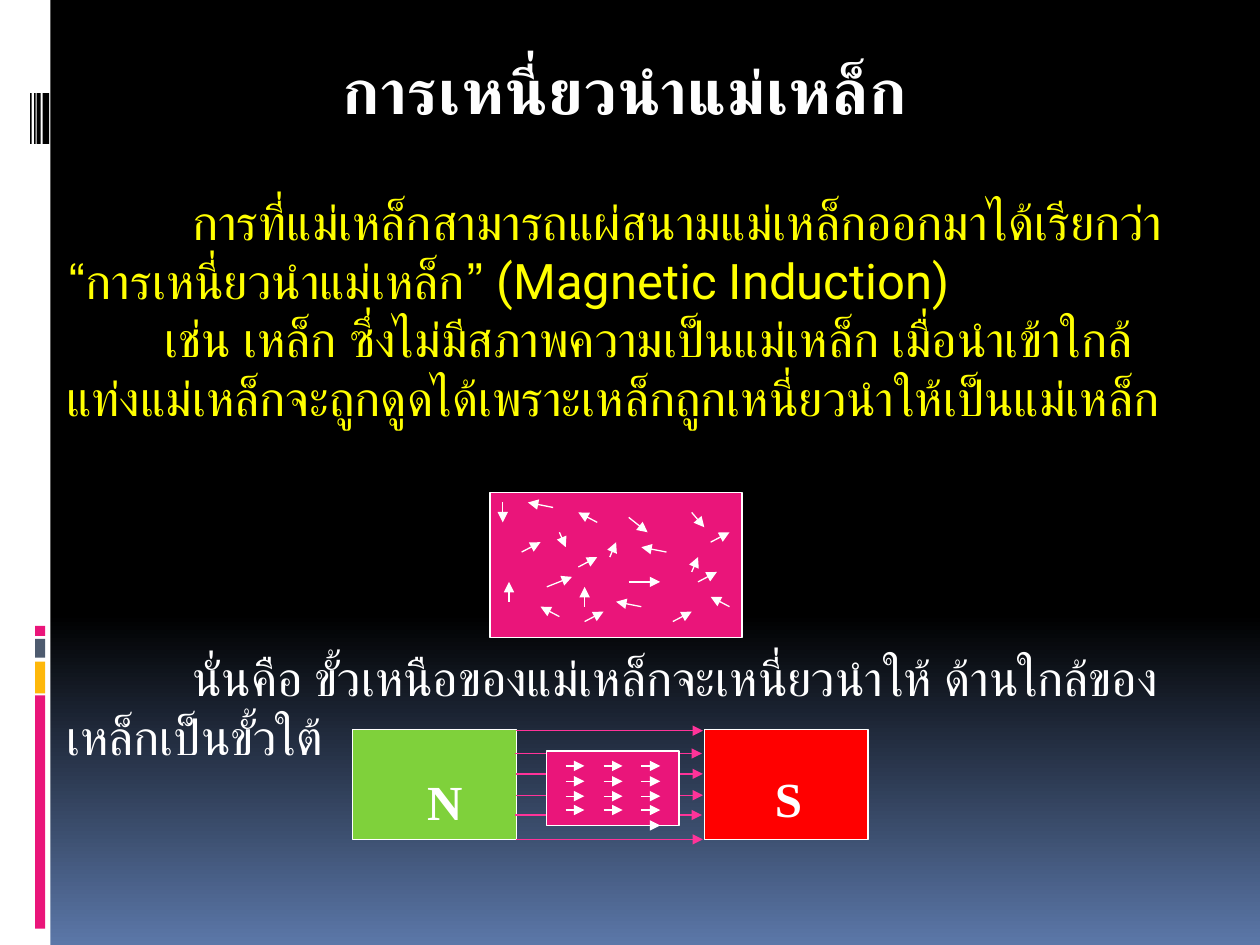
from dataclasses import dataclass
from itertools import product
from typing import NamedTuple, Optional

from lxml import etree
from pptx import Presentation
from pptx import util as u
from pptx.dml.color import RGBColor
from pptx.enum import shapes, text
from pptx.oxml.ns import qn


@dataclass(frozen=True)
class Theme:
    white: str = "FFFFFF"
    black: str = "000000"
    horizon: str = "5B77A8"
    pink: str = "EA157A"
    amber: str = "FEB80A"
    slate: str = "4E5B6F"
    green: str = "7FD13B"
    red: str = "FF0000"
    yellow: str = "FFFF00"
    flux: str = "FF3399"
    heading: str = "FEFEFE"
    heading_edge: str = "0AB09B"
    sans: str = "Roboto"
    serif: str = "Times New Roman"
    title_size: float = 36
    body_size: float = 28
    line_width: float = 0.75


class Area(NamedTuple):
    left: float
    top: float
    width: float
    height: float


class Arrow(NamedTuple):
    x1: float
    y1: float
    x2: float
    y2: float


class Span(NamedTuple):
    words: str
    color: str
    size: float
    font: str
    bold: bool = False


class Para(NamedTuple):
    spans: list[Span]
    indent: float = 0
    centered: bool = False


THEME = Theme()
FIELD = Area(9.88, 9.93, 5.08, 2.92)
FIELD_COLUMNS, FIELD_ROW = 40, 0.1
RANDOM_ARROWS = [
    Arrow(5, 12, 8, 10), Arrow(11, 8, 12, 11), Arrow(9, 19, 13, 17),
    Arrow(22, 18, 27, 18), Arrow(19, 13, 20, 10), Arrow(15, 23, 15, 19),
    Arrow(3, 22, 3, 18), Arrow(2, 2, 2, 6), Arrow(32, 4, 34, 7),
    Arrow(29, 26, 32, 24), Arrow(24, 23, 20, 22), Arrow(32, 16, 33, 13),
    Arrow(22, 5, 25, 8), Arrow(17, 6, 14, 4), Arrow(38, 23, 35, 21),
    Arrow(11, 25, 8, 23), Arrow(28, 12, 24, 11), Arrow(10, 3, 6, 2),
    Arrow(15, 26, 18, 24), Arrow(14, 15, 17, 13), Arrow(35, 10, 38, 8),
    Arrow(33, 18, 36, 16),
]
FLUX_STARTS = [(10.41, 14.73), (10.39, 15.19), (10.41, 15.6),
               (10.41, 16.03), (10.39, 16.43), (10.41, 16.92)]
FLUX_LENGTH = 3.76
IRON_COLUMNS = [11.4, 12.17, 12.93]
IRON_ROWS = [15.44, 15.75, 16.05, 16.33]
IRON_EXTRA = (12.93, 16.64)
IRON_LENGTH = 0.38


def rgb(color: str) -> RGBColor:
    return RGBColor.from_string(color)


def draw_block(page, area: Area, color: str, edge: Optional[str] = None) -> None:
    block = page.shapes.add_shape(
        shapes.MSO_SHAPE.RECTANGLE, *(u.Cm(value) for value in area))
    block.shadow.inherit = False
    block.fill.solid()
    block.fill.fore_color.rgb = rgb(color)
    if edge:
        block.line.color.rgb = rgb(edge)
        block.line.width = u.Pt(THEME.line_width)
    else:
        block.line.fill.background()


def draw_arrow(page, arrow: Arrow, color: str) -> None:
    line = page.shapes.add_connector(
        shapes.MSO_CONNECTOR.STRAIGHT, *(u.Cm(value) for value in arrow))
    line.line.color.rgb = rgb(color)
    line.line.width = u.Pt(THEME.line_width)
    etree.SubElement(line.line._get_or_add_ln(), qn("a:tailEnd"), type="triangle")
    etree.SubElement(line._element.spPr, qn("a:effectLst"))


def draw_text(page, area: Area, paras: list[Para]):
    box = page.shapes.add_textbox(*(u.Cm(value) for value in area))
    frame = box.text_frame
    frame.word_wrap = True
    frame.auto_size = text.MSO_AUTO_SIZE.SHAPE_TO_FIT_TEXT
    for index, item in enumerate(paras):
        para = frame.paragraphs[0] if index == 0 else frame.add_paragraph()
        if item.centered:
            para.alignment = text.PP_ALIGN.CENTER
        if item.indent:
            para._p.get_or_add_pPr().set("indent", str(u.Cm(item.indent)))
        for part in item.spans:
            span = para.add_run()
            span.text = part.words
            span.font.name = part.font
            span.font.size = u.Pt(part.size)
            span.font.bold = part.bold
            span.font.color.rgb = rgb(part.color)
    return box


def draw_title(page) -> None:
    heading = Span("การเหนี่ยวนำแม่เหล็ก", THEME.heading, THEME.title_size, THEME.sans, True)
    box = draw_text(page, Area(4.09, 0.91, 16.99, 1.8), [Para([heading], centered=True)])
    style = box.text_frame.paragraphs[0].runs[0].font._element
    style.set("spc", "50")
    edge = etree.Element(qn("a:ln"), w=str(u.Pt(1)))
    fill = etree.SubElement(edge, qn("a:solidFill"))
    etree.SubElement(fill, qn("a:srgbClr"), val=THEME.heading_edge)
    style.insert(0, edge)


def body(words: str, color: str, indent: float) -> Para:
    return Para([Span(words, color, THEME.body_size, THEME.sans)], indent)


def draw_backdrop(page) -> None:
    fill = page.background.fill
    fill.gradient()
    fill.gradient_angle = 270
    for stop, position, color in zip(
            fill.gradient_stops, (0.65, 1), (THEME.black, THEME.horizon)):
        stop.position = position
        stop.color.rgb = rgb(color)
    draw_block(page, Area(0, 0, 1.02, 19.05), THEME.white)
    for left, width in [(0.86, 0.13), (0.74, 0.08), (0.69, 0.03), (0.61, 0.03)]:
        draw_block(page, Area(left, 1.88, width, 1.02), THEME.black)
    for top, height, color in [(14.02, 4.7, THEME.pink), (13.34, 0.64, THEME.amber),
                               (12.88, 0.38, THEME.slate), (12.62, 0.2, THEME.pink)]:
        draw_block(page, Area(0.71, top, 0.2, height), color)


def draw_random_field(page) -> None:
    draw_block(page, FIELD, THEME.pink, THEME.white)
    column = FIELD.width / FIELD_COLUMNS
    for x1, y1, x2, y2 in RANDOM_ARROWS:
        draw_arrow(page, Arrow(FIELD.left + x1 * column, FIELD.top + y1 * FIELD_ROW,
                               FIELD.left + x2 * column, FIELD.top + y2 * FIELD_ROW),
                   THEME.white)


def draw_magnets(page) -> None:
    for left, color in [(7.11, THEME.green), (14.2, THEME.red)]:
        draw_block(page, Area(left, 14.71, 3.3, 2.21), color, THEME.white)
    for letter, left, top in [("N", 8.36, 15.42), ("S", 15.37, 15.37)]:
        label = Span(letter, THEME.white, THEME.body_size, THEME.serif, True)
        draw_text(page, Area(left, top, 1.02, 0.81), [Para([label])])
    for x, y in FLUX_STARTS:
        draw_arrow(page, Arrow(x, y, x + FLUX_LENGTH, y), THEME.flux)
    draw_block(page, Area(11.02, 15.14, 2.67, 1.5), THEME.pink, THEME.white)
    for x, y in [*product(IRON_COLUMNS, IRON_ROWS), IRON_EXTRA]:
        draw_arrow(page, Arrow(x, y, x + IRON_LENGTH, y), THEME.white)


def main() -> None:
    deck = Presentation()
    deck.slide_width, deck.slide_height = u.Cm(25.4), u.Cm(19.05)
    page = deck.slides.add_slide(deck.slide_layouts[6])
    draw_backdrop(page)
    draw_text(page, Area(1.09, 3.73, 23.39, 5.05), [
        body("การที่แม่เหล็กสามารถแผ่สนามแม่เหล็กออกมาได้เรียกว่า “การเหนี่ยวนำแม่เหล็ก” (Magnetic Induction)", THEME.yellow, 2.54),
        body("เช่น เหล็ก ซึ่งไม่มีสภาพความเป็นแม่เหล็ก เมื่อนำเข้าใกล้แท่งแม่เหล็กจะถูกดูดได้เพราะเหล็กถูกเหนี่ยวนำให้เป็นแม่เหล็ก", THEME.yellow, 1.98),
    ])
    draw_title(page)
    draw_random_field(page)
    draw_magnets(page)
    draw_text(page, Area(1.09, 12.93, 23.39, 1.45), [
        body("นั่นคือ ขั้วเหนือของแม่เหล็กจะเหนี่ยวนำให้ ด้านใกล้ของเหล็กเป็นขั้วใต้", THEME.white, 2.54),
    ])
    deck.save("out.pptx")


if __name__ == "__main__":
    main()
